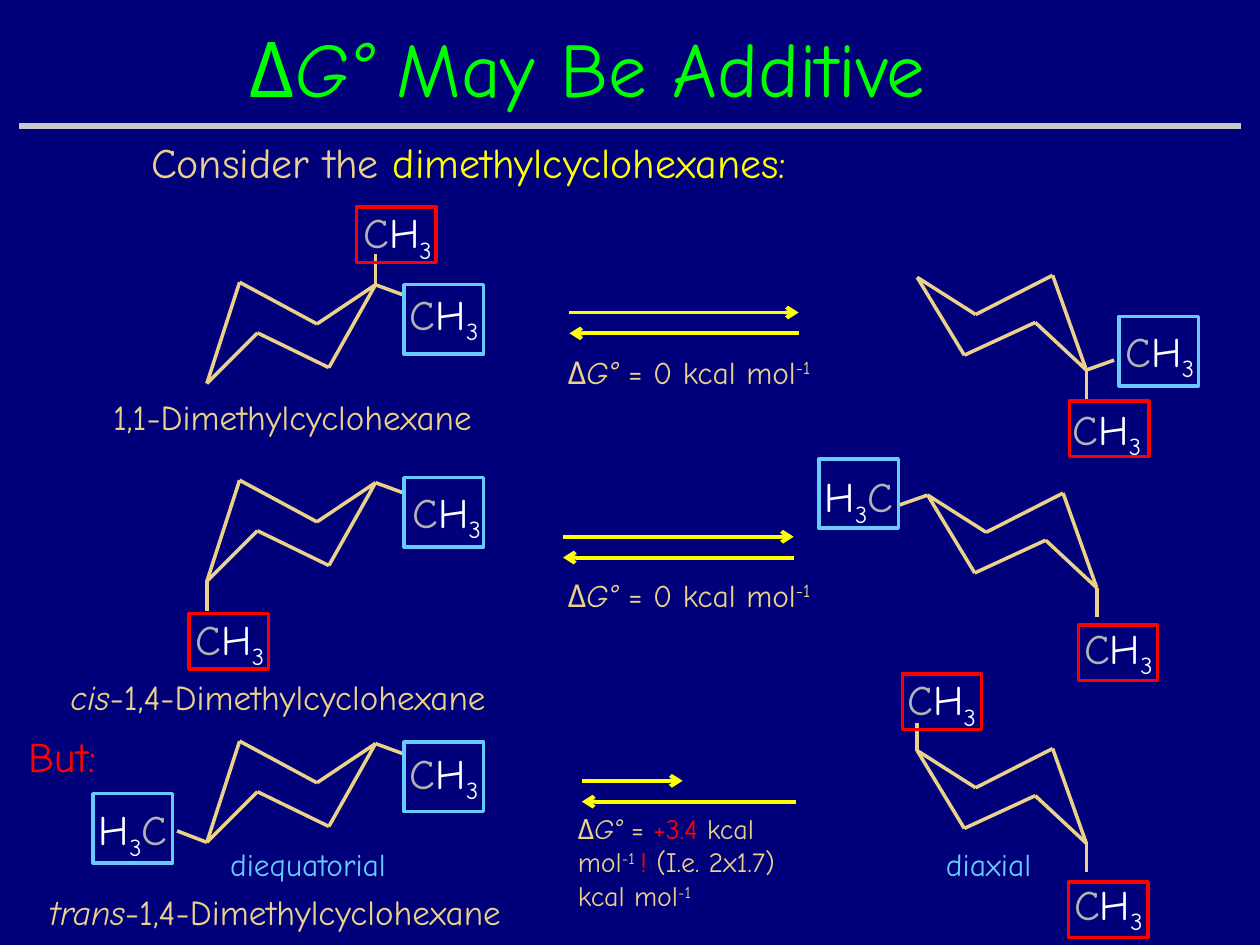
from lxml.etree import SubElement
from pptx import Presentation
from pptx.dml.color import RGBColor
from pptx.enum.shapes import MSO_CONNECTOR as Connector, MSO_SHAPE as Shape
from pptx.enum.text import PP_ALIGN as Align
from pptx.oxml.ns import qn
from pptx.util import Cm, Pt

NAVY, GREEN, YELLOW, RED = "00007A", "00FF00", "FFFF00", "FF0000"
SAND, SKY, SILVER, WHITE, RULE = "EBD189", "66CCFF", "B2B2B2", "FFFFFF", "C9C9C9"

LEFT_CHAIR = [(0, 0), (-0.66, 2.04), (0.36, 1.02), (1.8, 1.72), (2.74, 0.05), (1.56, 0.84)]
RIGHT_CHAIR = [(0, 0), (0.95, 1.57), (2.38, 0.91), (3.41, 1.87), (2.73, -0.04), (1.18, 0.75)]

METHYL = [("C", SILVER, {}), ("H", WHITE, {}), ("3", WHITE, {"base": -25})]
METHYL_REVERSED = METHYL[1:] + METHYL[:1]


def paint(target, color):
    target.solid()
    target.fore_color.rgb = RGBColor.from_string(color)


class Drawing:
    font = "Comic Neue"
    bond_width = 2
    frame_heights = {SKY: 1.4, RED: 1.12}

    def __init__(self, page):
        self.page = page

    def text(self, left, top, width, height, size, spans, align=Align.LEFT, wrap=True):
        box = self.page.shapes.add_textbox(Cm(left), Cm(top), Cm(width), Cm(height))
        box.text_frame.word_wrap = wrap
        para = box.text_frame.paragraphs[0]
        para.alignment = align
        for words, color, style in spans:
            span = para.add_run()
            span.text = words
            paint(span.font.fill, color)
            values = {"name": self.font, "size": Pt(size), "italic": style.get("italic", False)}
            for key, value in values.items():
                setattr(span.font, key, value)
            if "base" in style:
                span._r.get_or_add_rPr().set("baseline", str(style["base"] * 1000))

    def line(self, start, end, color=SAND, width=bond_width, arrow=None):
        line = self.page.shapes.add_connector(
            Connector.STRAIGHT, *(Cm(value) for value in (*start, *end)))
        line.line.width = Pt(width)
        paint(line.line.fill, color)
        if arrow:
            SubElement(line.line._get_or_add_ln(), qn(f"a:{arrow}"), type="arrow")
        SubElement(line._element.spPr, qn("a:effectLst"))

    def ring(self, left, top, chair, bonds):
        corners = [(left + x, top + y) for x, y in chair]
        for start, end in zip(corners, corners[1:] + corners[:1]):
            self.line(start, end)
        for corner, across, down in bonds:
            x, y = corners[corner]
            self.line((x, y), (x + across, y + down))

    def equilibrium(self, left, top, forward, backward):
        below = top + 0.42
        self.line((left, top), (left + forward, top), YELLOW, 2.25, "tailEnd")
        self.line((left, below), (left + backward, below), YELLOW, 2.25, "headEnd")

    def methyl(self, color, frame, label, spans=METHYL):
        left, top = frame
        box = self.page.shapes.add_shape(
            Shape.RECTANGLE, Cm(left), Cm(top), Cm(1.6), Cm(self.frame_heights[color]))
        box.shadow.inherit = False
        box.fill.background()
        box.line.width = Pt(self.bond_width)
        paint(box.line.fill, color)
        self.text(*label, 2.01, 1.27, 24, spans, Align.CENTER, False)


def main():
    deck = Presentation()
    deck.slide_width, deck.slide_height = Cm(25.4), Cm(19.05)
    page = deck.slides.add_slide(deck.slide_layouts[6])
    paint(page.background.fill, NAVY)
    drawing = Drawing(page)
    italic, raised = {"italic": True}, {"base": 30}

    drawing.text(4.78, 0.28, 15.85, 2.13, 44, [
        ("Δ", GREEN, {}), ("G° ", GREEN, italic), ("May Be Additive", GREEN, {})])
    drawing.line((0.38, 2.54), (25.02, 2.54), RULE, 3)
    drawing.text(2.06, 2.62, 14.78, 1.27, 24, [
        ("Consider the ", SAND, {}), ("dimethylcyclohexanes:", YELLOW, {})], Align.CENTER, False)

    right_equatorial = (4, 0.6, 0.22)
    right_axial = (3, 0, 0.58)
    rings = [
        (4.83, 5.69, LEFT_CHAIR, [(4, 0, -0.61), right_equatorial]),
        (4.83, 9.68, LEFT_CHAIR, [(1, 0, 0.6), right_equatorial]),
        (4.83, 14.94, LEFT_CHAIR, [(1, -0.6, -0.23), right_equatorial]),
        (18.49, 5.59, RIGHT_CHAIR, [(3, 0.56, -0.2), right_axial]),
        (18.7, 9.98, RIGHT_CHAIR, [(0, -0.57, 0.2), right_axial]),
        (18.49, 15.13, RIGHT_CHAIR, [(0, 0, -0.56), right_axial]),
    ]
    for ring in rings:
        drawing.ring(*ring)

    methyls = [
        (SKY, (8.15, 5.74), (7.95, 5.69)),
        (SKY, (22.56, 6.38), (22.38, 6.43)),
        (SKY, (8.15, 9.63), (8, 9.68)),
        (SKY, (16.51, 9.25), (16.31, 9.37), METHYL_REVERSED),
        (SKY, (8.15, 14.96), (7.95, 14.94)),
        (SKY, (1.88, 16), (1.68, 16.08), METHYL_REVERSED),
        (RED, (7.19, 4.17), (7.01, 4.04)),
        (RED, (21.56, 8.08), (21.31, 8)),
        (RED, (3.81, 12.37), (3.63, 12.24)),
        (RED, (21.74, 12.6), (21.54, 12.42)),
        (RED, (18.19, 13.59), (17.98, 13.46)),
        (RED, (21.54, 17.78), (21.34, 17.58)),
    ]
    for methyl in methyls:
        drawing.methyl(*methyl)

    drawing.equilibrium(11.48, 6.3, 4.62, 4.62)
    drawing.equilibrium(11.35, 10.82, 4.65, 4.65)
    drawing.equilibrium(11.73, 15.74, 2.03, 4.32)

    energy = [("Δ", SAND, {}), ("G°", SAND, italic)]
    for top in (6.99, 11.48):
        drawing.text(11.2, top, 5.89, 1.02, 18, energy + [
            (" = 0 kcal mol", SAND, {}), ("-1", SAND, raised)])
    drawing.text(11.4, 16.23, 5.08, 2.31, 16, energy + [
        (" = ", SAND, {}), ("+3.4 ", RED, {}), ("kcal mol", SAND, {}), ("-1 ", SAND, raised),
        ("! ", RED, {}), ("(I.e. 2x1.7) kcal mol", SAND, {}), ("-1", SAND, raised)])

    names = [
        (2.03, 7.85, 8.97, "", "1,1-Dimethylcyclohexane"),
        (1.17, 13.49, 9.98, "cis", "-1,4-Dimethylcyclohexane"),
        (0.74, 17.83, 11.02, "trans", "-1,4-Dimethylcyclohexane"),
    ]
    for left, top, width, prefix, name in names:
        spans = [(prefix, SAND, italic)] if prefix else []
        drawing.text(left, top, width, 1.09, 20, spans + [(name, SAND, {})])

    drawing.text(-0.08, 14.6, 2.67, 1.27, 24, [("But:", RED, {})], Align.CENTER)
    for left, width, words in [(4.39, 4.11, "diequatorial"), (18.82, 3.2, "diaxial")]:
        drawing.text(left, 16.92, width, 1.02, 18, [(words, SKY, {})])

    deck.save("out.pptx")


if __name__ == "__main__":
    main()
